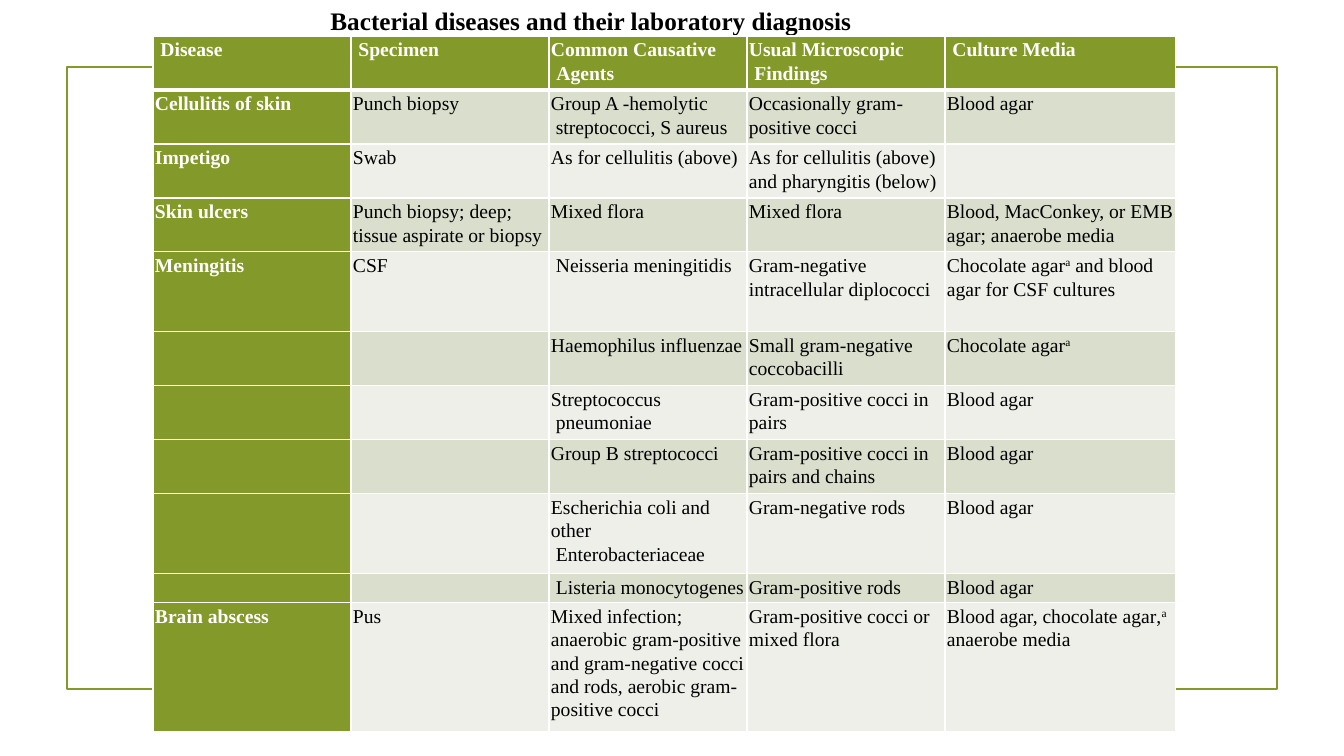
import pptx
import pptx.dml.color
import pptx.enum.shapes
import pptx.enum.text
import pptx.oxml
import pptx.oxml.ns
import pptx.util

SCALE = 12192000 / 1344
FONT = "Times New Roman"
COLORS = {
    "olive": "83992A",
    "sage": "D9DECD",
    "mist": "EDEFE8",
    "white": "FFFFFF",
    "black": "000000",
}
COLUMN_WIDTHS = [198, 198, 198, 198, 231]
ROW_HEIGHTS = [54, 54, 54, 54, 80, 54, 54, 54, 80, 29, 129]
SUPERSCRIPT_MARK = "^"
DIAGNOSES = [
    ["Disease ", "Specimen ", "Common Causative Agents ",
     "Usual Microscopic Findings ", "Culture Media "],
    ["Cellulitis of skin", "Punch biopsy", "Group A -hemolytic streptococci, S aureus ",
     "Occasionally gram-positive cocci", "Blood agar"],
    ["Impetigo", "Swab", "As for cellulitis (above)",
     "As for cellulitis (above) and pharyngitis (below)", ""],
    ["Skin ulcers", "Punch biopsy; deep; tissue aspirate or biopsy", "Mixed flora",
     "Mixed flora", "Blood, MacConkey, or EMB agar; anaerobe media"],
    ["Meningitis", "CSF", "Neisseria meningitidis ",
     "Gram-negative intracellular diplococci",
     "Chocolate agar^a^ and blood agar for CSF cultures"],
    ["", "", "Haemophilus influenzae ", "Small gram-negative coccobacilli",
     "Chocolate agar^a"],
    ["", "", "Streptococcus pneumoniae ", "Gram-positive cocci in pairs", "Blood agar"],
    ["", "", "Group B streptococci", "Gram-positive cocci in pairs and chains",
     "Blood agar"],
    ["", "", "Escherichia coli and other Enterobacteriaceae ", "Gram-negative rods",
     "Blood agar"],
    ["", "", "Listeria monocytogenes ", "Gram-positive rods", "Blood agar"],
    ["Brain abscess", "Pus",
     "Mixed infection; anaerobic gram-positive and gram-negative cocci and rods, "
     "aerobic gram-positive cocci",
     "Gram-positive cocci or mixed flora", "Blood agar, chocolate agar,^a^ anaerobe media"],
]


def px(length):
    return pptx.util.Emu(round(length * SCALE))


def color(name):
    return pptx.dml.color.RGBColor.from_string(COLORS[name])


def format_font(font, size, color_name, bold):
    font.name = FONT
    font.size = pptx.util.Pt(size)
    font.bold = bold
    font.color.rgb = color(color_name)


def add_frame(slide):
    frame = slide.shapes.add_shape(
        pptx.enum.shapes.MSO_SHAPE.RECTANGLE, px(67), px(67), px(1210), px(622))
    frame.shadow.inherit = False
    frame.fill.background()
    frame.line.color.rgb = color("olive")
    frame.line.width = pptx.util.Pt(1.25)


def set_title(slide, text):
    title = slide.shapes.title
    title.left, title.top, title.width, title.height = px(318), px(0), px(546), px(72)
    text_frame = title.text_frame
    text_frame.text = text
    text_frame.word_wrap = False
    text_frame.auto_size = pptx.enum.text.MSO_AUTO_SIZE.NONE
    text_frame.vertical_anchor = pptx.enum.text.MSO_ANCHOR.TOP
    paragraph = text_frame.paragraphs[0]
    paragraph.alignment = pptx.enum.text.PP_ALIGN.CENTER
    format_font(paragraph.font, 18, "black", True)


def set_borders(cell, bottom_width):
    properties = cell._tc.get_or_add_tcPr()
    namespace = pptx.oxml.ns.nsdecls("a")
    widths = {"lnL": 1, "lnR": 1, "lnT": 1, "lnB": bottom_width}
    for position, (side, width) in enumerate(widths.items()):
        border = pptx.oxml.parse_xml(
            f'<a:{side} {namespace} w="{pptx.util.Pt(width)}"><a:solidFill>'
            f'<a:srgbClr val="{COLORS["white"]}"/></a:solidFill></a:{side}>')
        properties.insert(position, border)


def write_cell(cell, text, color_name, bold):
    cell.margin_left = cell.margin_right = cell.margin_top = cell.margin_bottom = px(2)
    paragraph = cell.text_frame.paragraphs[0]
    paragraph.alignment = pptx.enum.text.PP_ALIGN.LEFT
    paragraph.line_spacing = 1.07
    paragraph._p.get_or_add_pPr().set("rtl", "1")
    format_font(paragraph.font, 14, color_name, bold)
    if not text:
        return
    for index, part in enumerate(text.split(SUPERSCRIPT_MARK)):
        run = paragraph.add_run()
        run.text = part
        if index % 2:
            run.font._element.set("baseline", "30000")


def add_diagnosis_table(slide):
    table = slide.shapes.add_table(
        len(ROW_HEIGHTS), len(COLUMN_WIDTHS), px(153), px(36),
        px(sum(COLUMN_WIDTHS)), px(sum(ROW_HEIGHTS))).table
    table.first_col = True
    for column, width in zip(table.columns, COLUMN_WIDTHS):
        column.width = px(width)
    for row_index, (row, height) in enumerate(zip(table.rows, ROW_HEIGHTS)):
        row.height = px(height)
        band = "sage" if row_index % 2 else "mist"
        for column_index, cell in enumerate(row.cells):
            heading = row_index == 0 or column_index == 0
            write_cell(cell, DIAGNOSES[row_index][column_index],
                       "white" if heading else "black", heading)
            cell.fill.solid()
            cell.fill.fore_color.rgb = color("olive" if heading else band)
            set_borders(cell, 3 if row_index == 0 else 1)


def main():
    """Build the slide of bacterial diseases and their laboratory diagnosis."""
    presentation = pptx.Presentation()
    presentation.slide_width = px(1344)
    presentation.slide_height = px(756)
    slide = presentation.slides.add_slide(presentation.slide_layouts[5])
    add_frame(slide)
    set_title(slide, "Bacterial diseases and their laboratory diagnosis")
    add_diagnosis_table(slide)
    presentation.save("out.pptx")


if __name__ == "__main__":
    main()
